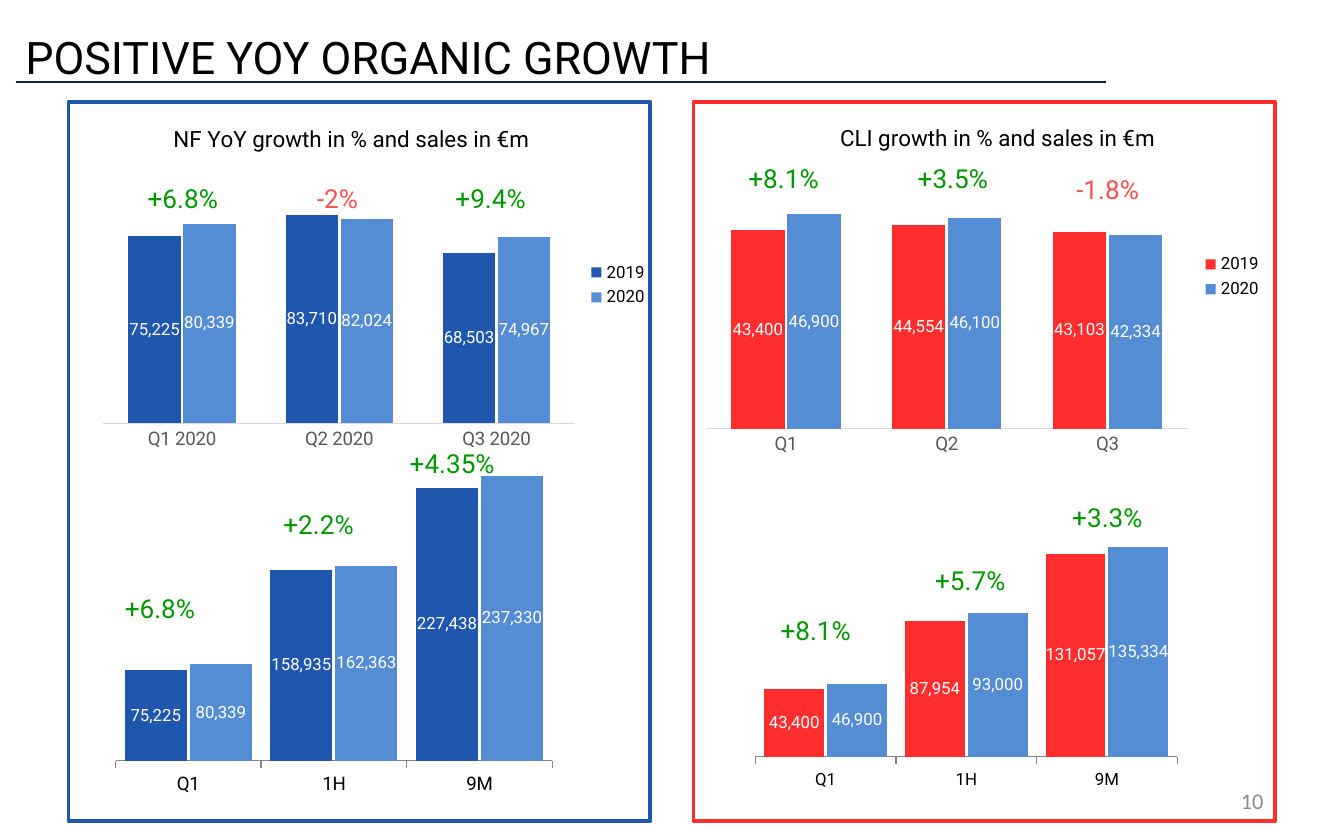
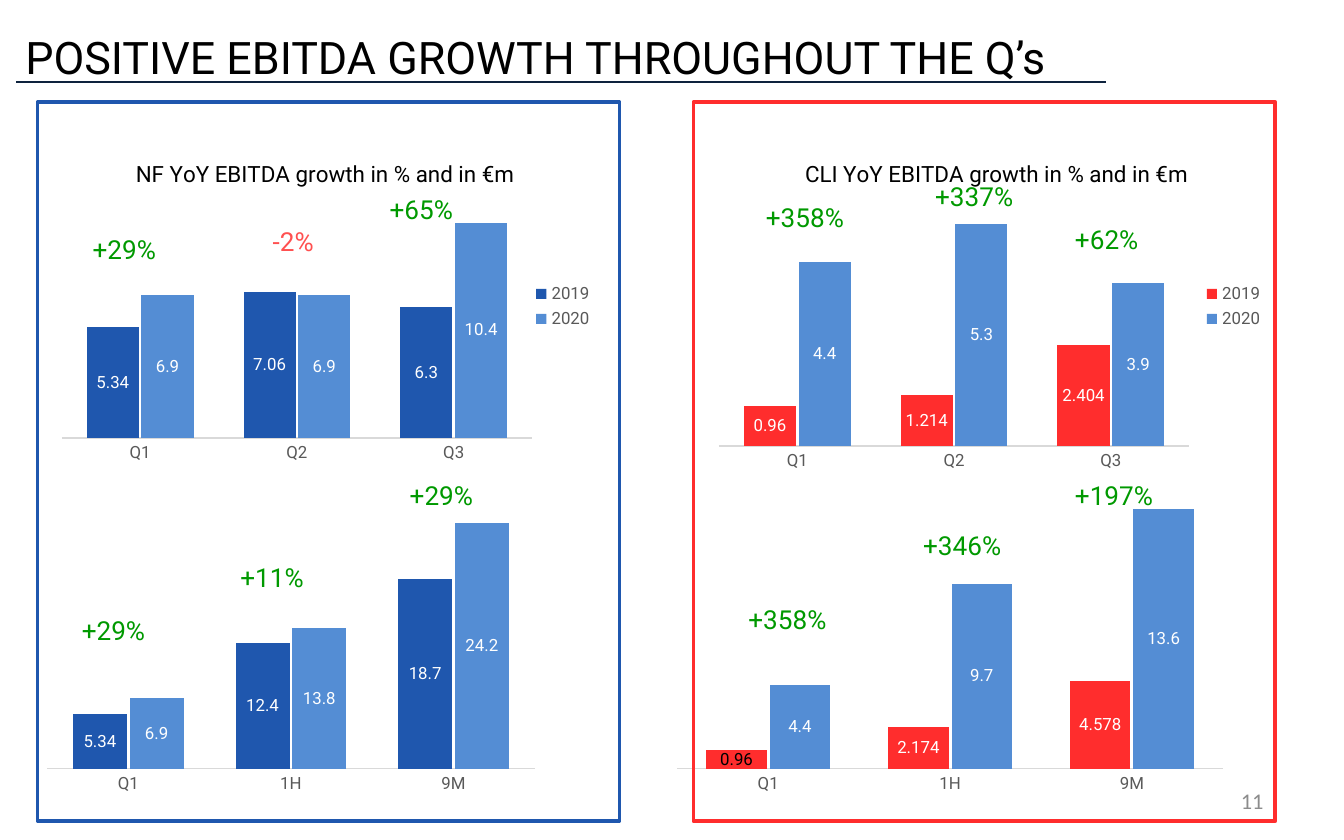
from copy import deepcopy
from dataclasses import dataclass

from lxml.etree import SubElement
from pptx import Presentation
from pptx.chart.data import CategoryChartData
from pptx.dml.color import RGBColor
from pptx.enum.chart import (XL_CHART_TYPE, XL_LABEL_POSITION, XL_LEGEND_POSITION,
                             XL_TICK_LABEL_POSITION, XL_TICK_MARK)
from pptx.enum.shapes import MSO_CONNECTOR, MSO_SHAPE
from pptx.enum.text import MSO_ANCHOR, MSO_AUTO_SIZE, PP_ALIGN
from pptx.oxml import parse_xml
from pptx.oxml.ns import nsdecls, qn
from pptx.util import Inches, Pt


@dataclass(frozen=True)
class Theme:
    font: str = "Roboto"
    number_font: str = "Calibri"
    black: str = "000000"
    white: str = "FFFFFF"
    grey: str = "595959"
    page_grey: str = "8C8C8C"
    axis_light: str = "D9D9D9"
    axis_dark: str = "868686"
    rule: str = "0E233E"
    blue: str = "1F57AE"
    light_blue: str = "548DD4"
    red: str = "FF2D2D"
    gain: str = "009900"
    loss: str = "FF5050"
    title_size: int = 24
    growth_size: int = 14
    heading_size: int = 12
    axis_size: int = 10
    small_size: int = 9


theme = Theme()


def add_text(slide, text, box, size, color=theme.black, font=theme.font,
             align=PP_ALIGN.LEFT, anchor=MSO_ANCHOR.TOP, grow=False):
    shape = slide.shapes.add_textbox(*map(Inches, box))
    frame = shape.text_frame
    frame.word_wrap = True
    frame.vertical_anchor = anchor
    frame.auto_size = MSO_AUTO_SIZE.SHAPE_TO_FIT_TEXT if grow else MSO_AUTO_SIZE.NONE
    paragraph = frame.paragraphs[0]
    paragraph.alignment = align
    run = paragraph.add_run()
    run.text = text
    run.font.name, run.font.size = font, Pt(size)
    run.font.color.rgb = RGBColor.from_string(color)


def place_in_chart(parent, index, chart_box, place, inner=False):
    """Fix a plot or heading at a place given in slide inches."""
    for old in parent.findall(qn("c:layout")):
        parent.remove(old)
    left, top, width, height = chart_box
    values = [("xMode", "edge"), ("yMode", "edge"),
              ("x", (place[0] - left) / width), ("y", (place[1] - top) / height)]
    if inner:
        values = [("layoutTarget", "inner"), *values,
                  ("w", place[2] / width), ("h", place[3] / height)]
    layout = parse_xml(f"<c:layout {nsdecls('c')}><c:manualLayout/></c:layout>")
    for name, value in values:
        SubElement(layout[0], qn(f"c:{name}")).set("val", str(value))
    parent.insert(index, layout)


quarters = ["Q1", "Q2", "Q3"]
periods = ["Q1", "1H", "9M"]
years = ["2019", "2020"]
unnamed = ["Series 1", "Series 2"]

# Growth labels: text, left, top, width
slides = [
    dict(
        title="POSITIVE YOY ORGANIC GROWTH", page="10", blue_frame_left=0.51,
        number_format="#,##0", legend_color=theme.black,
        charts=[
            dict(box=(0.69, 0.84, 4.23, 2.56), plot=(0.77, 1.30, 3.51, 1.85),
                 heading="NF YoY growth in % and sales in €m", heading_at=(1.26, 0.89),
                 categories=["Q1 2020", "Q2 2020", "Q3 2020"], names=years,
                 values=[(75225, 83710, 68503), (80339, 82024, 74967)],
                 color=theme.blue, maximum=100000),
            dict(box=(5.16, 0.68, 4.33, 2.76), plot=(5.25, 1.15, 3.59, 2.04),
                 heading="CLI growth in % and sales in €m", heading_at=(6.22, 0.88),
                 categories=quarters, names=years,
                 values=[(43400, 44554, 43103), (46900, 46100, 42334)],
                 color=theme.red, maximum=60000),
            dict(box=(0.28, 3.28, 4.65, 2.68), plot=(0.86, 3.43, 3.25, 2.23),
                 categories=periods, names=unnamed,
                 values=[(75225, 158935, 227438), (80339, 162363, 237330)],
                 color=theme.blue, maximum=250000, gap=30, ticks=True),
            dict(box=(5.08, 3.12, 4.49, 2.76), plot=(5.62, 3.33, 3.14, 2.30),
                 categories=periods, names=unnamed,
                 values=[(43400, 87954, 131057), (46900, 93000, 135334)],
                 color=theme.red, maximum=200000, gap=30, ticks=True,
                 axis_size=theme.small_size),
        ],
        growth=[
            ("+6.8%", 1, 1.31, 0.79), ("-2%", 2.26, 1.31, 0.55), ("+9.4%", 3.29, 1.31, 0.78),
            ("+6.8%", 0.83, 4.36, 0.79), ("+2.2%", 2.01, 3.73, 0.79),
            ("+4.35%", 2.95, 3.28, 0.94),
            ("+8.1%", 5.47, 1.16, 0.74), ("+3.5%", 6.73, 1.16, 0.77),
            ("-1.8%", 7.91, 1.24, 0.68),
            ("+8.1%", 5.71, 4.52, 0.74), ("+5.7%", 6.86, 4.15, 0.76),
            ("+3.3%", 7.88, 3.68, 0.77),
        ],
    ),
    dict(
        title="POSITIVE EBITDA GROWTH THROUGHOUT THE Q’s", page="11", blue_frame_left=0.28,
        number_format="General", legend_color=theme.grey,
        charts=[
            dict(box=(0.28, 1, 4.23, 2.56), plot=(0.46, 1.41, 3.5, 1.85),
                 heading="NF YoY EBITDA growth in % and in €m", heading_at=(0.98, 1.15),
                 categories=quarters, names=years,
                 values=[(5.34, 7.06, 6.3), (6.9, 6.9, 10.4)],
                 color=theme.blue, maximum=12, axis_size=theme.small_size),
            dict(box=(0.28, 3.4, 3.78, 2.56), plot=(0.35, 3.45, 3.63, 2.27),
                 categories=periods, names=unnamed,
                 values=[(5.34, 12.4, 18.7), (6.9, 13.8, 24.2)],
                 color=theme.blue, maximum=30, axis_size=theme.small_size),
            dict(box=(5.27, 1, 4.23, 2.56), plot=(5.35, 1.45, 3.5, 1.87),
                 heading="CLI YoY EBITDA growth in % and in €m", heading_at=(5.96, 1.15),
                 categories=quarters, names=years,
                 values=[(0.96, 1.214, 2.404), (4.4, 5.3, 3.9)],
                 color=theme.red, maximum=6, axis_size=theme.small_size),
            dict(box=(4.95, 3.4, 4.23, 2.56), plot=(5.04, 3.45, 4.06, 2.27),
                 categories=periods, names=unnamed,
                 values=[(0.96, 2.174, 4.578), (4.4, 9.7, 13.6)],
                 color=theme.red, maximum=16, axis_size=theme.small_size,
                 dark_first_label=True),
        ],
        growth=[
            ("+29%", 0.59, 1.69, 0.79), ("-2%", 1.93, 1.63, 0.55), ("+65%", 2.8, 1.39, 0.79),
            ("+29%", 0.51, 4.52, 0.79), ("+11%", 1.69, 4.13, 0.79),
            ("+29%", 2.95, 3.52, 0.79),
            ("+358%", 5.6, 1.45, 0.83), ("+337%", 6.86, 1.29, 0.83),
            ("+62%", 7.9, 1.61, 0.72),
            ("+358%", 5.47, 4.44, 0.83), ("+346%", 6.77, 3.89, 0.84),
            ("+197%", 7.9, 3.52, 0.8),
        ],
    ),
]

no_fill = parse_xml(f"<c:spPr {nsdecls('c', 'a')}><a:noFill/><a:ln><a:noFill/></a:ln></c:spPr>")

presentation = Presentation()
presentation.slide_width, presentation.slide_height = Inches(10), Inches(6.25)

for content in slides:
    slide = presentation.slides.add_slide(presentation.slide_layouts[6])

    # Page number, title and rule
    add_text(slide, content["page"], (7.17, 5.79, 2.33, 0.33), theme.heading_size,
             color=theme.page_grey, font=theme.number_font,
             align=PP_ALIGN.RIGHT, anchor=MSO_ANCHOR.MIDDLE)
    add_text(slide, content["title"], (0.09, 0, 9, 0.84), theme.title_size,
             anchor=MSO_ANCHOR.MIDDLE)
    rule = slide.shapes.add_connector(MSO_CONNECTOR.STRAIGHT, Inches(0.12), Inches(0.61),
                                      Inches(8.23), Inches(0.61))
    rule.line.color.rgb = RGBColor.from_string(theme.rule)
    rule.line.width = Pt(0.75)
    SubElement(rule.element.spPr, qn("a:effectLst"))

    # Column charts
    for item in content["charts"]:
        data = CategoryChartData(number_format=content["number_format"])
        data.categories = item["categories"]
        for name, values in zip(item["names"], item["values"]):
            data.add_series(name, values)
        chart = slide.shapes.add_chart(XL_CHART_TYPE.COLUMN_CLUSTERED,
                                       *map(Inches, item["box"]), data).chart
        chart.font.name, chart.font.size = theme.font, Pt(theme.axis_size)
        chart.font.color.rgb = RGBColor.from_string(theme.black)
        chart_element = chart.element.find(qn("c:chart"))
        chart_element.addnext(deepcopy(no_fill))
        place_in_chart(chart_element.find(qn("c:plotArea")), 0,
                       item["box"], item["plot"], inner=True)

        # Heading and legend
        with_heading = "heading" in item
        chart.has_title = chart.has_legend = with_heading
        if with_heading:
            paragraph = chart.chart_title.text_frame.paragraphs[0]
            run = paragraph.add_run()
            run.text = item["heading"]
            run.font.name, run.font.size = theme.font, Pt(theme.heading_size)
            run.font.bold = False
            run.font.color.rgb = RGBColor.from_string(theme.black)
            place_in_chart(chart_element.find(qn("c:title")), 1,
                           item["box"], item["heading_at"])
            chart.legend.position = XL_LEGEND_POSITION.RIGHT
            chart.legend.include_in_layout = False
            chart.legend.font.name = theme.font
            chart.legend.font.size = Pt(theme.small_size)
            chart.legend.font.color.rgb = RGBColor.from_string(content["legend_color"])

        # Axes
        ticks = item.get("ticks", False)
        value_axis, category_axis = chart.value_axis, chart.category_axis
        value_axis.minimum_scale, value_axis.maximum_scale = 0, item["maximum"]
        value_axis.has_major_gridlines = False
        value_axis.visible = False
        category_axis.major_tick_mark = XL_TICK_MARK.OUTSIDE if ticks else XL_TICK_MARK.NONE
        category_axis.minor_tick_mark = XL_TICK_MARK.NONE
        category_axis.tick_label_position = XL_TICK_LABEL_POSITION.NEXT_TO_AXIS
        category_axis.format.line.width = Pt(0.75)
        category_axis.format.line.color.rgb = RGBColor.from_string(
            theme.axis_dark if ticks else theme.axis_light)
        axis_font = category_axis.tick_labels.font
        axis_font.name = theme.font
        axis_font.size = Pt(item.get("axis_size", theme.axis_size))
        axis_font.color.rgb = RGBColor.from_string(theme.black if ticks else theme.grey)

        # Columns and their values
        plot = chart.plots[0]
        plot.gap_width, plot.overlap = item.get("gap", 96), -5
        plot.vary_by_categories = False
        for series, color in zip(plot.series, (item["color"], theme.light_blue)):
            series.invert_if_negative = False
            series.format.fill.solid()
            series.format.fill.fore_color.rgb = RGBColor.from_string(color)
            labels = series.data_labels
            labels.show_value = True
            labels.position = XL_LABEL_POSITION.CENTER
            labels.number_format = content["number_format"]
            labels.number_format_is_linked = False
            labels.font.name, labels.font.size = theme.font, Pt(theme.small_size)
            labels.font.color.rgb = RGBColor.from_string(theme.white)
        if item.get("dark_first_label"):
            label = plot.series[0].points[0].data_label
            label.font.name, label.font.size = theme.font, Pt(theme.small_size)
            label.font.color.rgb = RGBColor.from_string(theme.black)
            label.position = XL_LABEL_POSITION.CENTER

    # Frames around the two halves
    for left, color in ((content["blue_frame_left"], theme.blue), (5.16, theme.red)):
        frame = slide.shapes.add_shape(MSO_SHAPE.RECTANGLE, Inches(left), Inches(0.76),
                                       Inches(4.33), Inches(5.35))
        frame.shadow.inherit = False
        frame.fill.background()
        frame.line.color.rgb = RGBColor.from_string(color)
        frame.line.width = Pt(2)

    # Growth rates above the columns
    for text, left, top, width in content["growth"]:
        add_text(slide, text, (left, top, width, 0.34), theme.growth_size, grow=True,
                 color=theme.loss if text.startswith("-") else theme.gain)

presentation.save("out.pptx")
